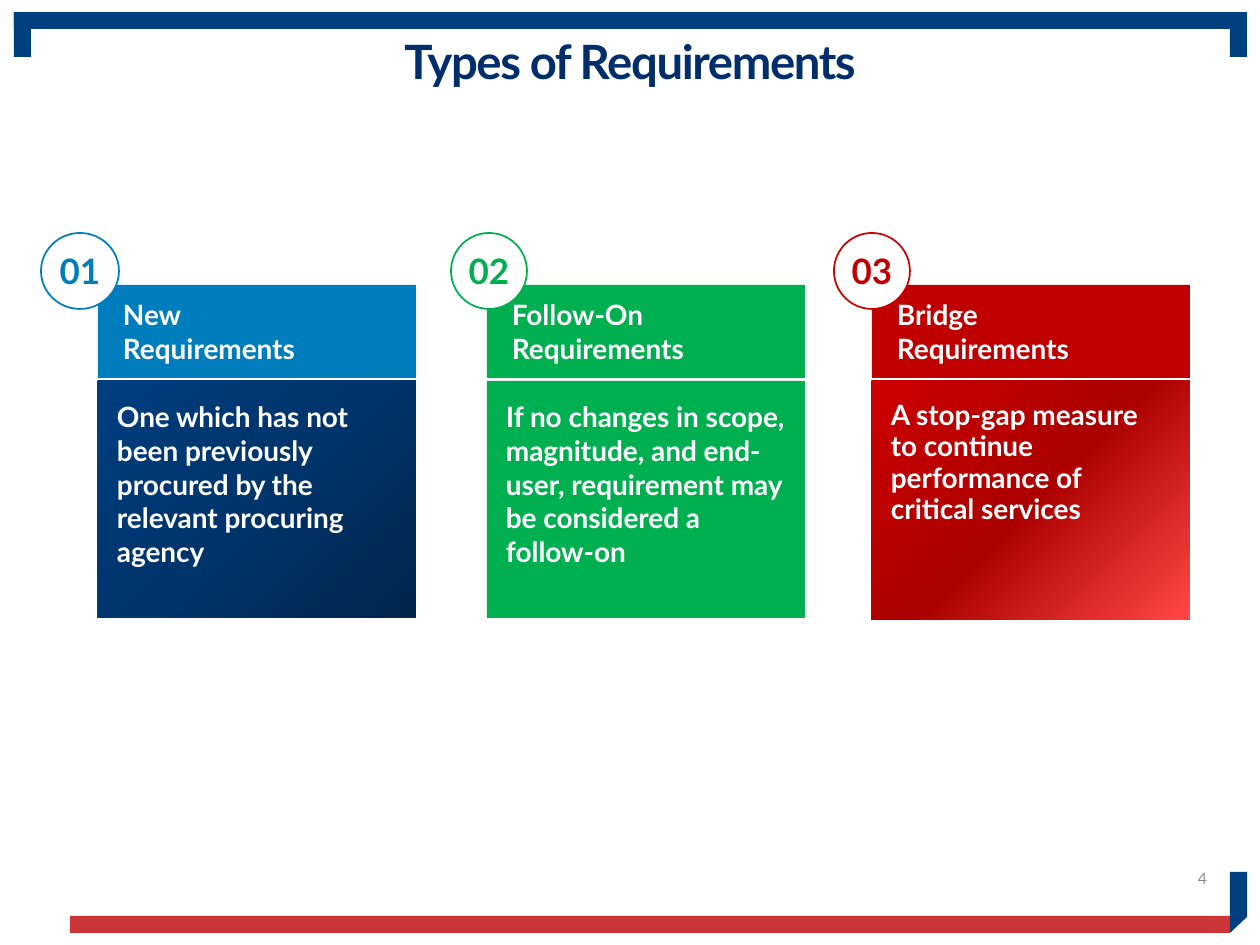
from collections import namedtuple
from copy import deepcopy
from dataclasses import dataclass

from pptx import Presentation
from pptx.dml.color import RGBColor
from pptx.enum.shapes import MSO_SHAPE
from pptx.enum.text import MSO_ANCHOR, PP_ALIGN
from pptx.oxml.ns import qn
from pptx.util import Emu, Pt

SCALE = 914400 / 126

Card = namedtuple("Card", "left badge_dx badge_w body_h number head body color ring fill spacing")


@dataclass(frozen=True)
class Theme:
    """Colours, font and type sizes of the slide."""
    font: str = "Lato"
    navy: str = "003F80"
    red: str = "CC3538"
    title: str = "002E6D"
    grey: str = "8D8D8E"
    white: str = "FFFFFF"
    blue: str = "007DBC"
    green: str = "00B050"
    crimson: str = "C00000"
    ring_red: str = "CC0000"
    deep_blue: tuple = ("00254B", "00346B", "003E7F")
    deep_red: tuple = ("FF4747", "AC0000", "CC0000")
    title_pt: int = 27
    badge_pt: int = 20
    text_pt: int = 16
    page_pt: int = 9


T = Theme()

CARDS = [
    Card(98, -57, 78, 237, "01", ["New", "Requirements"],
         "One which has not been previously procured by the relevant procuring agency",
         T.blue, T.blue, T.deep_blue, None),
    Card(487, -36, 76, 237, "02", ["Follow-On Requirements"],
         "If no changes in scope, magnitude, and end-user, requirement may be considered a follow-on",
         T.green, T.green, (T.green,), None),
    Card(872, -38, 76, 239, "03", ["Bridge", "Requirements"],
         "A stop-gap measure to continue performance of critical services",
         T.crimson, T.ring_red, T.deep_red, 0.94),
]


def px(n):
    """Turn pixels into EMU."""
    return Emu(round(n * SCALE))


def rgb(color):
    """Turn a hex string into a colour."""
    return RGBColor.from_string(color)


def paint(sp, colors):
    """Fill a shape with one colour, or with a diagonal gradient."""
    sp.shadow.inherit = False
    sp.line.fill.background()
    if len(colors) == 1:
        sp.fill.solid()
        sp.fill.fore_color.rgb = rgb(colors[0])
        return
    sp.fill.gradient()
    sp.fill.gradient_angle = 135
    first = sp._element.spPr.find(".//" + qn("a:gs"))
    for _ in colors[2:]:
        first.addnext(deepcopy(first))
    for i, (stop, color) in enumerate(zip(sp.fill.gradient_stops, colors)):
        stop.position = i / (len(colors) - 1)
        stop.color.rgb = rgb(color)


def add_block(s, kind, box, colors):
    """Add a preset shape with a fill and no outline."""
    sp = s.shapes.add_shape(kind, *map(px, box))
    paint(sp, colors)
    return sp


def write(sp, lines, size, color, align=PP_ALIGN.LEFT, anchor=MSO_ANCHOR.TOP,
          inset=(13, 6), bold=True, wrap=True):
    """Write paragraphs in one style into a shape."""
    tf = sp.text_frame
    tf.word_wrap = wrap
    tf.vertical_anchor = anchor
    tf.margin_left = tf.margin_right = px(inset[0])
    tf.margin_top = tf.margin_bottom = px(inset[1])
    tf.text = "\n".join(lines)
    for p in tf.paragraphs:
        p.alignment = align
        p.font.name, p.font.size, p.font.bold = T.font, Pt(size), bold
        p.font.color.rgb = rgb(color)
    return tf


def add_frame(s, left, top, right, bottom):
    """Draw the bars and corners that frame the slide."""
    bar, corner = 17, 45
    inner = right - bar
    for box, color in [
        ((left, top, inner - left, bar), T.navy),
        ((inner, top, bar, corner), T.navy),
        ((left, top, bar, corner), T.navy),
        ((left + 56, bottom - bar, inner - left - 56, bar), T.red),
    ]:
        add_block(s, MSO_SHAPE.RECTANGLE, box, [color])
    fold = s.shapes.build_freeform(px(inner), px(bottom - 61))
    fold.add_line_segments([(px(right), px(bottom - 61)), (px(right), px(bottom - 16)),
                            (px(inner), px(bottom))], close=True)
    paint(fold.convert_to_shape(), [T.navy])


def add_title(s, text, box):
    """Place and format the title placeholder."""
    sp = s.shapes.title
    sp.left, sp.top, sp.width, sp.height = map(px, box)
    p = write(sp, [text], T.title_pt, T.title, PP_ALIGN.CENTER).paragraphs[0]
    p.line_spacing = 0.9
    p.runs[0]._r.get_or_add_rPr().set("spc", "-80")


def add_page_number(s, text, box):
    """Place the page number."""
    sp = s.shapes.add_textbox(*map(px, box))
    write(sp, [text], T.page_pt, T.grey, PP_ALIGN.RIGHT, MSO_ANCHOR.MIDDLE, bold=False)


def add_card(s, card, top, width):
    """Draw one card: body, heading and numbered badge."""
    body = add_block(s, MSO_SHAPE.RECTANGLE, (card.left, top + 96, width, card.body_h), card.fill)
    tf = write(body, [card.body], T.text_pt, T.white, inset=(19, 19))
    if card.spacing:
        tf.paragraphs[0].line_spacing = card.spacing
    head = add_block(s, MSO_SHAPE.RECTANGLE, (card.left, top, width, 93), [card.color])
    write(head, card.head, T.text_pt, T.white, inset=(25, 13))
    badge = add_block(s, MSO_SHAPE.OVAL,
                      (card.left + card.badge_dx, top - 52, card.badge_w, 76), [T.white])
    badge.line.color.rgb = rgb(card.ring)
    badge.line.width = Pt(1)
    write(badge, [card.number], T.badge_pt, card.color, PP_ALIGN.CENTER,
          MSO_ANCHOR.MIDDLE, wrap=False)


def main():
    """Build and save the slide."""
    prs = Presentation()
    prs.slide_width, prs.slide_height = px(1260), px(945)
    s = prs.slides.add_slide(prs.slide_layouts[5])
    add_frame(s, 14, 12, 1247, 933)
    add_title(s, "Types of Requirements", (87, 33, 1086, 82))
    add_page_number(s, "4", (936, 853, 284, 50))
    for card in CARDS:
        add_card(s, card, 285, 318)
    prs.save("out.pptx")


if __name__ == "__main__":
    main()
